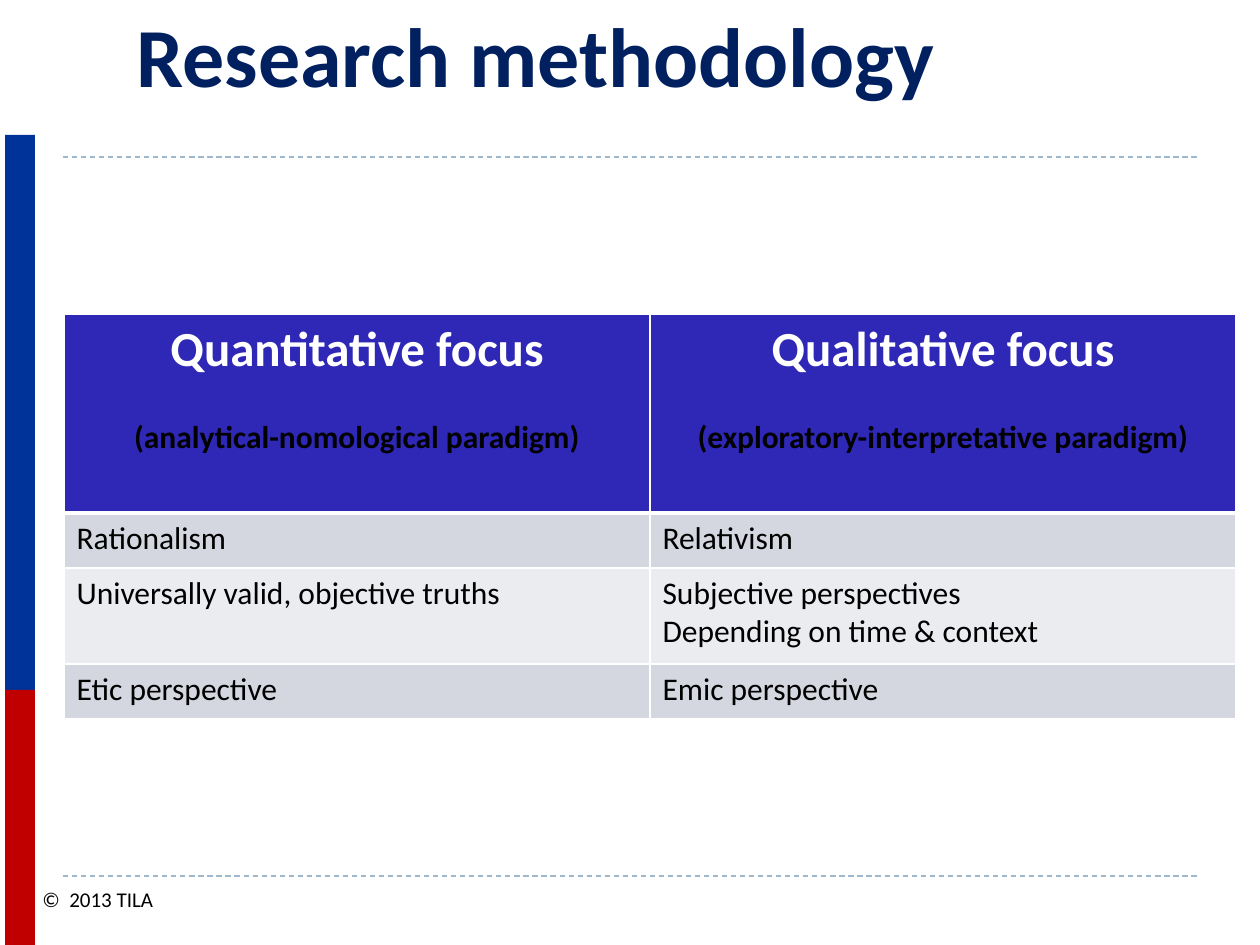
from lxml.etree import SubElement
from pptx import Presentation
from pptx.dml.color import RGBColor
from pptx.enum.dml import MSO_LINE
from pptx.enum.shapes import MSO_CONNECTOR, MSO_SHAPE
from pptx.enum.text import MSO_ANCHOR, PP_ALIGN
from pptx.oxml.ns import qn
from pptx.util import Pt

PX = 914400 // 126
FONT = "Calibri"
TITLE = "Research methodology"
FOOTER = "©  2013 TILA"
HEADINGS = [
    ("Quantitative focus", "(analytical-nomological paradigm)"),
    ("Qualitative focus", "(exploratory-interpretative paradigm)"),
]
CONTRASTS = [
    (["Rationalism"], ["Relativism"]),
    (["Universally valid, objective truths"],
     ["Subjective perspectives", "Depending on time & context"]),
    (["Etic perspective"], ["Emic perspective"]),
]
ROW_HEIGHTS = [199, 55, 96, 55]
COLUMN_WIDTH = 586
HEADER_FILL = "2F28B6"
BAND_FILLS = ["D5D7E0", "EBECF0"]
RULE_TOPS = [157, 876]
SIDE_BARS = [(135, 555, "003399"), (690, 255, "C00000")]


def color(value):
    return RGBColor.from_string(value)


def write(paragraph, text, size=18, ink="000000", bold=False, align=PP_ALIGN.LEFT, before=0):
    paragraph.alignment = align
    if before:
        paragraph.space_before = Pt(before)
    run = paragraph.add_run()
    run.text = text
    run.font.name = FONT
    run.font.size = Pt(size)
    run.font.bold = bold
    run.font.color.rgb = color(ink)


def add_label(slide, box, text, anchor=MSO_ANCHOR.TOP, **style):
    label = slide.shapes.add_textbox(*(n * PX for n in box)).text_frame
    label.word_wrap = True
    label.vertical_anchor = anchor
    write(label.paragraphs[0], text, **style)
    return label


def add_rule(slide, top):
    rule = slide.shapes.add_connector(
        MSO_CONNECTOR.STRAIGHT, 63 * PX, top * PX, 1197 * PX, top * PX)
    rule.line.color.rgb = color("9FB8CD")
    rule.line.width = Pt(0.75)
    rule.line.dash_style = MSO_LINE.DASH
    SubElement(rule._element.spPr, qn("a:effectLst"))


def add_side_bar(slide, top, height, fill):
    bar = slide.shapes.add_shape(MSO_SHAPE.RECTANGLE, 5 * PX, top * PX, 30 * PX, height * PX)
    bar.shadow.inherit = False
    bar.fill.solid()
    bar.fill.fore_color.rgb = color(fill)
    bar.line.fill.background()


def style_cell(cell, fill, top=1, bottom=1):
    properties = cell._tc.get_or_add_tcPr()
    for side, width in (("L", 1), ("R", 1), ("T", top), ("B", bottom)):
        border = SubElement(properties, qn(f"a:ln{side}"), w=str(Pt(width)))
        SubElement(SubElement(border, qn("a:solidFill")), qn("a:srgbClr"), val="FFFFFF")
    cell.fill.solid()
    cell.fill.fore_color.rgb = color(fill)


def add_comparison(slide):
    table = slide.shapes.add_table(
        len(ROW_HEIGHTS), len(HEADINGS), 64 * PX, 314 * PX,
        COLUMN_WIDTH * len(HEADINGS) * PX, sum(ROW_HEIGHTS) * PX).table
    for row, height in zip(table.rows, ROW_HEIGHTS):
        row.height = height * PX
    for column, (focus, paradigm) in enumerate(HEADINGS):
        table.columns[column].width = COLUMN_WIDTH * PX
        cell = table.cell(0, column)
        style_cell(cell, HEADER_FILL, bottom=3)
        frame = cell.text_frame
        write(frame.paragraphs[0], focus, size=28, ink="FFFFFF", bold=True, align=PP_ALIGN.CENTER)
        write(frame.add_paragraph(), paradigm, bold=True, align=PP_ALIGN.CENTER, before=22)
    for row, contrast in enumerate(CONTRASTS, 1):
        for column, statements in enumerate(contrast):
            cell = table.cell(row, column)
            style_cell(cell, BAND_FILLS[(row - 1) % 2], top=3 if row == 1 else 1)
            frame = cell.text_frame
            for index, statement in enumerate(statements):
                write(frame.add_paragraph() if index else frame.paragraphs[0], statement)


def main():
    """Build the research methodology slide."""
    deck = Presentation()
    deck.slide_width, deck.slide_height = 1260 * PX, 945 * PX
    slide = deck.slides.add_slide(deck.slide_layouts[6])
    for top in RULE_TOPS:
        add_rule(slide, top)
    for bar in SIDE_BARS:
        add_side_bar(slide, *bar)
    add_label(slide, (30, 880, 164, 38), FOOTER, size=12)
    title = add_label(slide, (124, 45, 922, 59), TITLE, anchor=MSO_ANCHOR.BOTTOM,
                      size=48, ink="002060", bold=True)
    title.margin_bottom = 0
    add_comparison(slide)
    deck.save("out.pptx")


if __name__ == "__main__":
    main()
